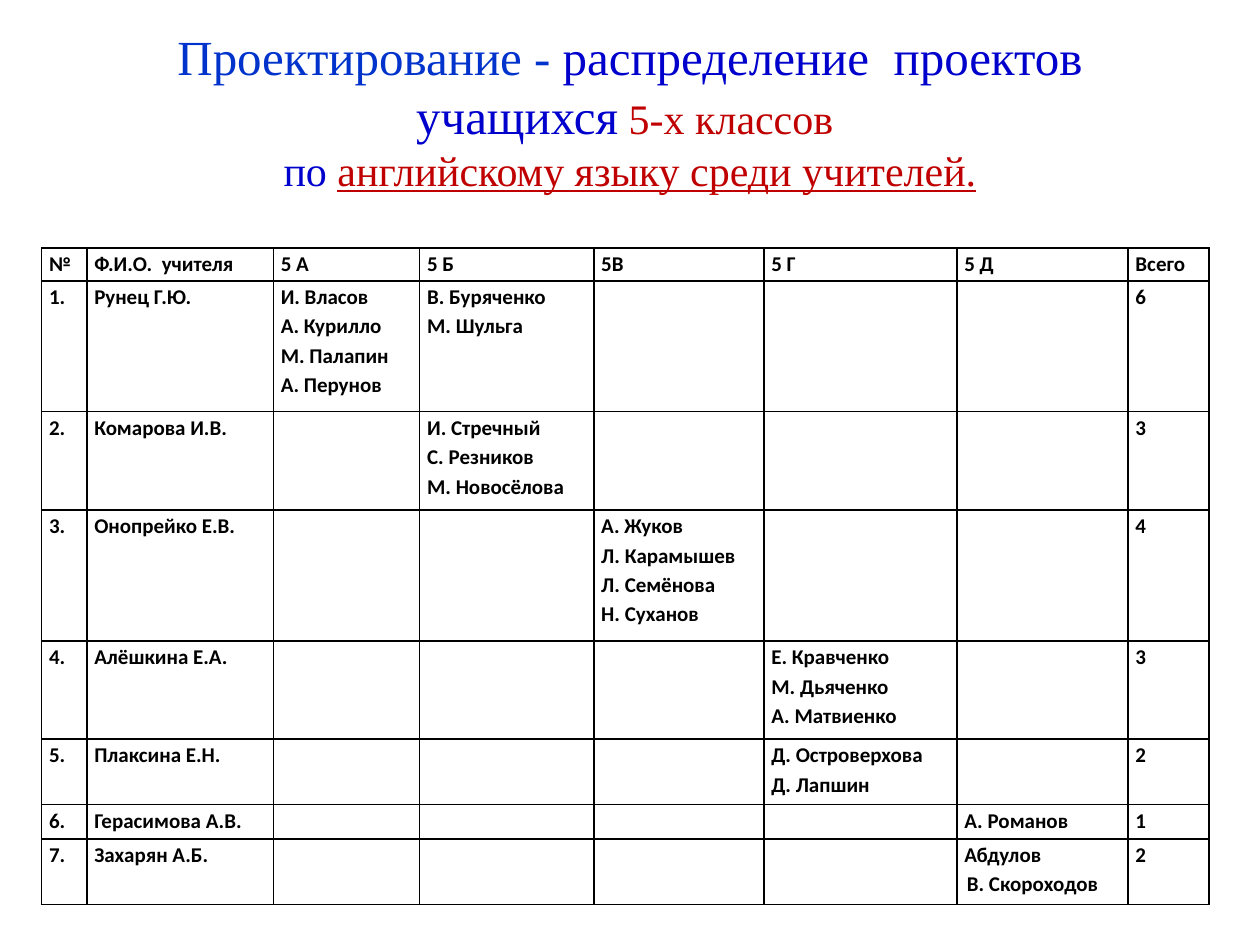
"""Build a slide that shows how pupils' projects are shared among teachers."""
from copy import deepcopy
from dataclasses import dataclass

from lxml.etree import SubElement as Sub
from pptx import Presentation as Deck
from pptx.dml.color import RGBColor as Rgb
from pptx.enum.text import MSO_ANCHOR as Anchor, PP_ALIGN as Align
from pptx.oxml.ns import qn
from pptx.util import Cm, Pt


@dataclass
class Part:
    text: str
    size: int
    color: str
    under: bool = False


@dataclass
class Row:
    high: float
    name: str
    pupils: dict[int, str]
    total: int


BLACK = "000000"
BLUE = "0000CC"
RED = "C00000"
TITLE = [
    Part("Проектирование - ", 28, "0033CC"),
    Part("распределение  проектов учащихся", 28, BLUE),
    Part(" ", 24, BLUE),
    Part("5-х классов \n", 24, RED),
    Part("по ", 24, BLUE),
    Part("английскому языку среди учителей.", 24, RED, True),
]
HEADS = ["№", "Ф.И.О.  учителя", "5 А", "5 Б", "5В", "5 Г", "5 Д", "Всего"]
WIDTHS = [0.91, 3.76, 2.95, 3.51, 3.43, 3.89, 3.45, 1.63]
HEAD_HIGH = 0.66
ROWS = [
    Row(2.64, "Рунец Г.Ю.", {2: "И. Власов\nА. Курилло\nМ. Палапин\nА. Перунов",
                             3: "В. Буряченко\nМ. Шульга"}, 6),
    Row(1.98, "Комарова И.В.", {3: "И. Стречный\nС. Резников\nМ. Новосёлова"}, 3),
    Row(2.64, "Онопрейко Е.В.",
        {4: "А. Жуков\nЛ. Карамышев\nЛ. Семёнова\nН. Суханов"}, 4),
    Row(1.98, "Алёшкина Е.А.", {5: "Е. Кравченко\nМ. Дьяченко\nА. Матвиенко"}, 3),
    Row(1.32, "Плаксина Е.Н.", {5: "Д. Островерхова\nД. Лапшин"}, 2),
    Row(0.69, "Герасимова А.В.", {6: "А. Романов"}, 1),
    Row(1.32, "Захарян А.Б.", {6: "Абдулов\nВ. Скороходов"}, 2),
]


def style(run, face: str, size: int, color: str) -> None:
    run.font.name = face
    run.font.size = Pt(size)
    run.font.color.rgb = Rgb.from_string(color)


def match_breaks(para) -> None:
    look = para.runs[0].font._element
    for brk in para._p.findall(qn("a:br")):
        brk.insert(0, deepcopy(look))


def add_title(slide, parts: list[Part]) -> None:
    box = slide.shapes.add_textbox(Cm(1.27), Cm(0.64), Cm(22.86), Cm(3.18))
    frame = box.text_frame
    frame.word_wrap = True
    frame.vertical_anchor = Anchor.MIDDLE
    para = frame.paragraphs[0]
    para.alignment = Align.CENTER
    for part in parts:
        run = para.add_run()
        run.text = part.text.rstrip("\n")
        style(run, "Times New Roman", part.size, part.color)
        run.font.underline = part.under
        if part.text.endswith("\n"):
            para.add_line_break()
    match_breaks(para)


def add_edges(cell) -> None:
    props = cell._tc.get_or_add_tcPr()
    for side in ("lnL", "lnR", "lnT", "lnB"):
        line = Sub(props, qn(f"a:{side}"), w=str(Pt(1)))
        Sub(Sub(line, qn("a:solidFill")), qn("a:srgbClr"), val=BLACK)


def fill_cell(cell, text: str) -> None:
    add_edges(cell)
    cell.fill.background()
    cell.margin_left = cell.margin_right = Cm(0.15)
    cell.margin_top = cell.margin_bottom = 0
    para = cell.text_frame.paragraphs[0]
    para.line_spacing = 1.15
    if not text:
        Sub(para._p, qn("a:endParaRPr"), sz="1200")
        return
    para.text = text
    for run in para.runs:
        style(run, "Calibri", 12, BLACK)
        run.font.bold = True
    match_breaks(para)


def add_grid(slide, rows: list[Row]):
    lines = [HEADS]
    for num, row in enumerate(rows, 1):
        mid = [row.pupils.get(col, "") for col in range(2, len(HEADS) - 1)]
        lines.append([f"{num}.", row.name, *mid, str(row.total)])
    highs = [HEAD_HIGH] + [row.high for row in rows]
    grid = slide.shapes.add_table(len(lines), len(HEADS), Cm(0.84), Cm(5),
                                  Cm(sum(WIDTHS)), Cm(sum(highs))).table
    grid.first_row = grid.horz_banding = False
    for col, wide in zip(grid.columns, WIDTHS):
        col.width = Cm(wide)
    for row, high, texts in zip(grid.rows, highs, lines):
        row.height = Cm(high)
        for cell, text in zip(row.cells, texts):
            fill_cell(cell, text)
    return grid


def hang(cell, size: float) -> None:
    props = cell.text_frame.paragraphs[0]._p.get_or_add_pPr()
    props.set("marL", str(Cm(size)))
    props.set("indent", str(-Cm(size)))


def main() -> None:
    deck = Deck()
    deck.slide_width, deck.slide_height = Cm(25.4), Cm(19.05)
    slide = deck.slides.add_slide(deck.slide_layouts[6])
    add_title(slide, TITLE)
    grid = add_grid(slide, ROWS)
    hang(grid.cell(len(ROWS), 6), 0.05)
    deck.save("out.pptx")


if __name__ == "__main__":
    main()
